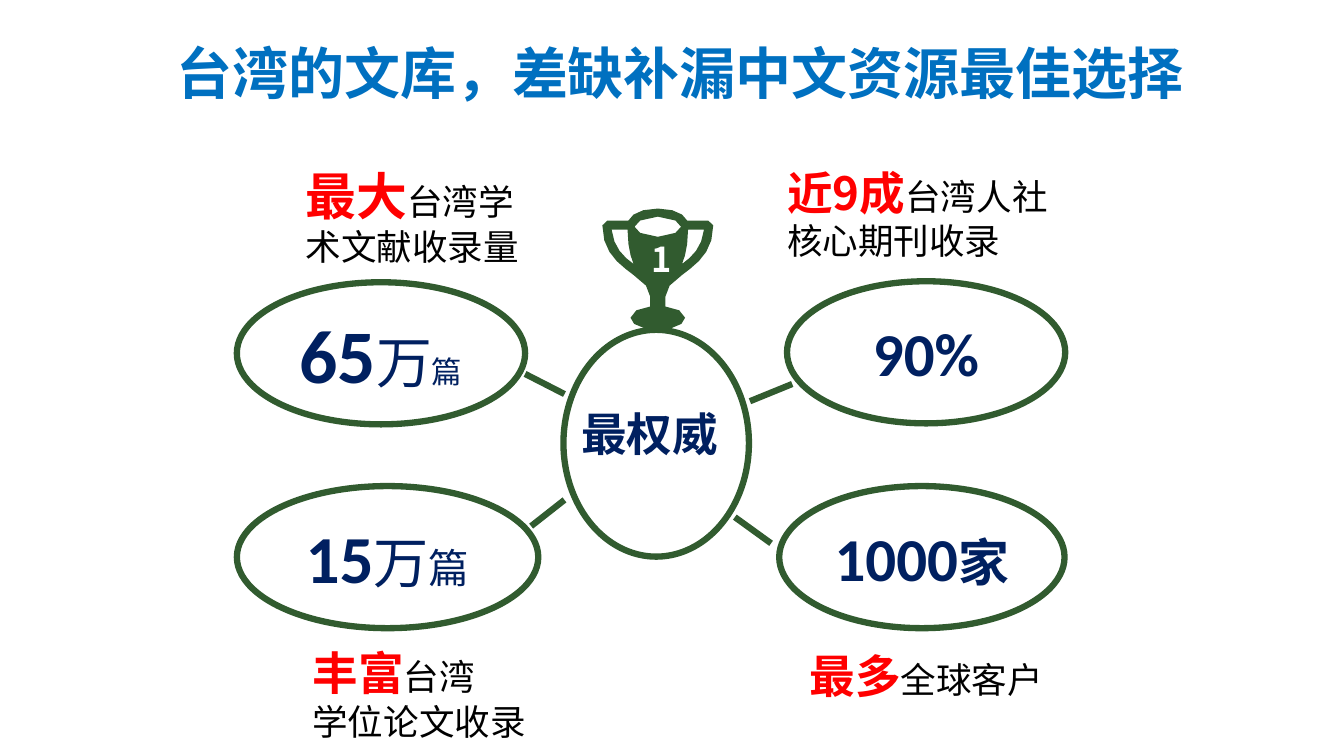
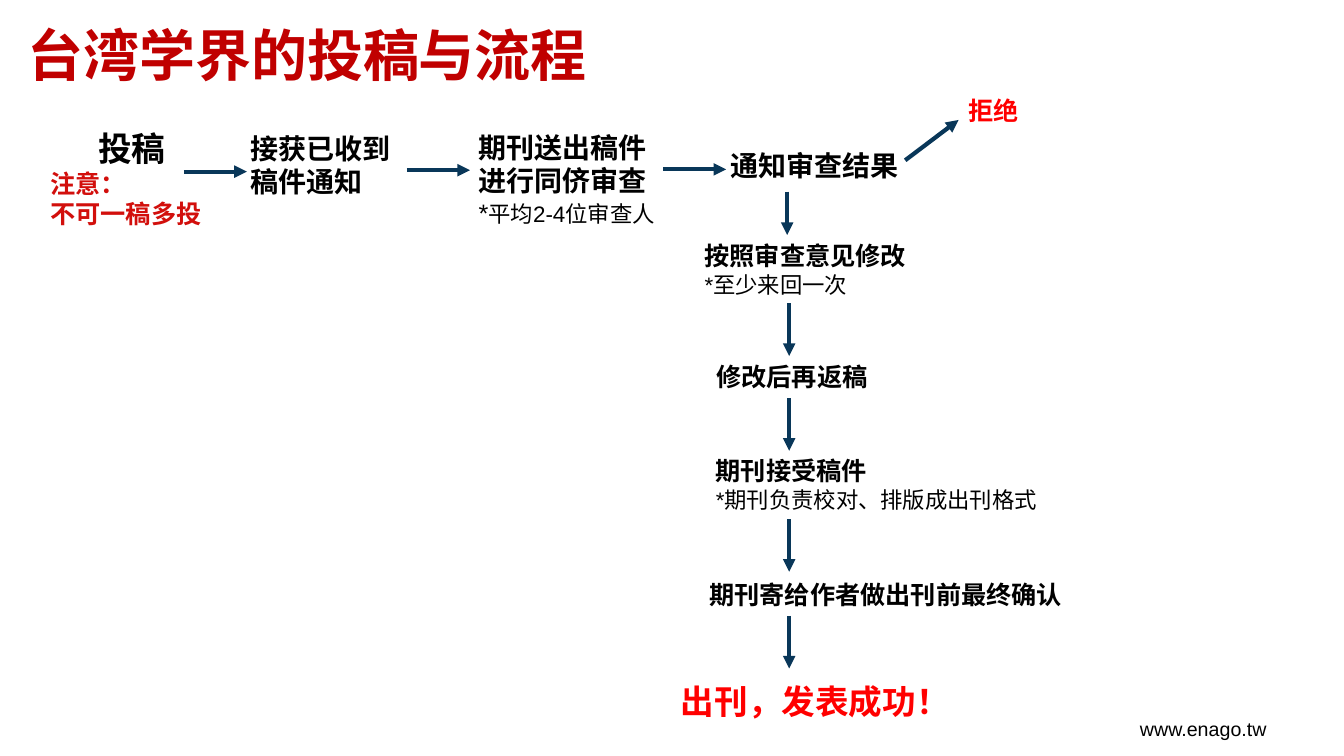
"""Build two slides on Taiwan scholarly resources and the submission process."""
import math

import lxml.etree
import pptx
import pptx.dml.color
import pptx.enum.shapes
import pptx.enum.text
import pptx.oxml.ns
import pptx.util

Pt = pptx.util.Pt
RGB = pptx.dml.color.RGBColor
ALIGN = pptx.enum.text.PP_ALIGN
ANCHOR = pptx.enum.text.MSO_ANCHOR
SHAPE = pptx.enum.shapes.MSO_SHAPE
qn = pptx.oxml.ns.qn

GREEN = RGB(0x31, 0x5B, 0x2F)
NAVY = RGB(0x00, 0x20, 0x60)
RED = RGB(0xFF, 0x00, 0x00)
WARNING = RGB(0xD2, 0x0F, 0x0C)
CRIMSON = RGB(0xC0, 0x00, 0x00)
BLUE = RGB(0x00, 0x70, 0xC0)
ARROW = RGB(0x09, 0x37, 0x59)
BLACK = RGB(0x00, 0x00, 0x00)
WHITE = RGB(0xFF, 0xFF, 0xFF)
CJK, LATIN, NUMERIC = "Noto Sans CJK SC", "Arial", "Calibri"

FIGURES = [
    ((169.2, 201.6, 205.9, 101.5), [("65", 54, True), ("万", 39.9, False), ("篇", 21.8, False)]),
    ((169.2, 347.2, 215.3, 101.5), [("15", 48, True), ("万", 39.4, False), ("篇", 29, False)]),
    ((562.2, 200.9, 198.7, 101.5), [("90%", 43.5, True)]),
    ((556.6, 347.2, 203.8, 101.5), [("1000", 43.5, True), ("家", 36.3, True)]),
]
CLAIMS = [
    ((218.2, 117.4, 157, 74.9), "最大", 36.3, ["台湾学术文献收录量"]),
    ((223.2, 460.8, 167.8, 70.6), "丰富", 32.6, ["台湾", "学位论文收录"]),
    ((562.2, 117.4, 187.2, 70.6), "近9成", 32.6, ["台湾人社核心期刊收录"]),
    ((578.2, 463, 170.6, 39.6), "最多", 32.6, ["全球客户"]),
]
HUB = (402.5, 235.6, 132.5, 162)
SPOKES = [
    (375.1, 267.1, 403.2, 281.5), (379.4, 375.8, 403.2, 357.1),
    (535.7, 286.6, 565.9, 274.3), (524.9, 369.4, 550.8, 388.1),
]

CUP_CENTER, CUP_TOP = 469.9, 149
CUP_HALVES = [
    [[(0, 0)], [(12, 0), (19, 4), (21, 8.6)], [(36, 8.6)],
     [(38, 8.6), (39.6, 10), (39.6, 12)], [(39.6, 32), (27, 40), (17.3, 47.5)],
     [(9.5, 53), (5.4, 57), (5.4, 63)], [(5.4, 70)],
     [(13, 70.5), (19.5, 74), (19.5, 78)], [(19.5, 83), (11, 86.4), (0, 86.4)]],
    [[(0, 5.8)], [(11.5, 5.8), (16.6, 10.8), (16.6, 13)],
     [(16.6, 15.1), (11.5, 20.2), (0, 20.2)]],
]
CUP_HANDLE = [[(17.3, 39.6)], [(19.5, 34.5), (21.6, 26.6), (21.6, 15)], [(33, 15)],
              [(31.5, 28), (24.5, 34.5), (17.3, 39.6)]]
CHORD = 8

STEPS = [
    ((172.1, 90.3, 132.5, 55.4), [("接获已收到稿件通知", 20, BLACK, True)]),
    ((334.8, 89.4, 145.4, 77.8), [("期刊送出稿件进行同侪审查", 20, BLACK, True),
                                  [("*", 18, BLACK, False), ("平均2-4位审查人", 16, BLACK, False)]]),
    ((514.8, 102.4, 144, 31.7), [("通知审查结果", 20, BLACK, True)]),
    ((684.7, 64.6, 117.4, 28.8), [("拒绝", 18, RED, True)]),
    ((496.2, 168.2, 218.9, 48.2), [("按照审查意见修改", 18, BLACK, True),
                                   ("*至少来回一次", 16, BLACK, False)]),
    ((504.6, 254.9, 126, 28.8), [("修改后再返稿", 18, BLACK, True)]),
    ((504.2, 322, 253.4, 48.2), [("期刊接受稿件", 18, BLACK, True),
                                 ("*期刊负责校对、排版成出刊格式", 16, BLACK, False)]),
    ((499.6, 410.4, 269.3, 28.8), [("期刊寄给作者做出刊前最终确认", 18, BLACK, True)]),
    ((479.3, 483.1, 229, 36), [("出刊，发表成功！", 24, RED, True)]),
]
SUBMIT = [("投稿", 24, BLACK, True), ("注意：", 18, WARNING, True),
          ("不可一稿多投", 18, WARNING, True)]
ACROSS = [(131.3, 122.6), (290.7, 121.6), (473.7, 121)]
ACROSS_LENGTH = 45
DOWN_X, DOWN_LENGTH = 563.7, 37.6
DOWN_TOPS = [216.7, 284.4, 370.8, 439.9]
OTHER_ARROWS = [(646.6, 114.5, 684.7, 85.7), (562.3, 136.8, 562.3, 167.8)]


def style(font, size, color, bold):
    """Set size, colour and weight."""
    font.size, font.bold = Pt(size), bold
    font.color.rgb = color


def write(frame, paragraphs, name, align=ALIGN.LEFT, inset=True):
    """Fill a text frame; a paragraph is one run or a list of runs."""
    frame.word_wrap = True
    if not inset:
        frame.margin_left = frame.margin_right = frame.margin_top = frame.margin_bottom = 0
    for index, runs in enumerate(paragraphs):
        paragraph = frame.add_paragraph() if index else frame.paragraphs[0]
        paragraph.alignment = align
        paragraph.font.name = name
        runs = runs if isinstance(runs, list) else [runs]
        for text, *look in runs:
            run = paragraph.add_run()
            run.text = text
            style(paragraph.font if len(runs) == 1 else run.font, *look)


def add_text(slide, box, paragraphs, name, **options):
    """Add a text box and return its frame."""
    frame = slide.shapes.add_textbox(*map(Pt, box)).text_frame
    write(frame, paragraphs, name, **options)
    return frame


def add_titled_slide(deck, box, text, name, color, line_spacing=None):
    """Add a title-only slide with its title placed and styled."""
    slide = deck.slides.add_slide(deck.slide_layouts[5])
    title = slide.shapes.title
    title.left, title.top, title.width, title.height = map(Pt, box)
    frame = title.text_frame
    frame.auto_size = pptx.enum.text.MSO_AUTO_SIZE.NONE
    frame.vertical_anchor = ANCHOR.TOP
    write(frame, [(text, 40, color, True)], name)
    if line_spacing:
        frame.paragraphs[0].line_spacing = Pt(line_spacing)
    return slide


def add_ellipse(slide, box):
    """Add a white ellipse with a green outline."""
    ellipse = slide.shapes.add_shape(SHAPE.OVAL, *map(Pt, box))
    ellipse.shadow.inherit = False
    ellipse.fill.solid()
    ellipse.fill.fore_color.rgb = WHITE
    ellipse.line.color.rgb = GREEN
    ellipse.line.width = Pt(4.5)
    return ellipse


def add_line(slide, ends, color, width, arrow=False):
    """Add a straight connector, with an arrowhead if asked."""
    line = slide.shapes.add_connector(pptx.enum.shapes.MSO_CONNECTOR.STRAIGHT, *map(Pt, ends))
    line.line.color.rgb = color
    line.line.width = Pt(width)
    if arrow:
        lxml.etree.SubElement(line.line._get_or_add_ln(), qn("a:tailEnd"), type="triangle")
    lxml.etree.SubElement(line._element.spPr, qn("a:effectLst"))


def trace(segments):
    """Turn line and cubic segments into a short list of points."""
    points = list(segments[0])
    for segment in segments[1:]:
        if len(segment) == 1:
            points += segment
            continue
        corners = [points[-1], *segment]
        steps = max(1, round(math.dist(corners[0], corners[-1]) / CHORD))
        for step in range(1, steps + 1):
            t = step / steps
            weights = ((1 - t) ** 3, 3 * t * (1 - t) ** 2, 3 * t * t * (1 - t), t ** 3)
            points.append(tuple(sum(w * c[axis] for w, c in zip(weights, corners))
                                for axis in (0, 1)))
    return points


def mirror(points):
    """Reflect points about the cup's axis, in reverse order."""
    return [(-x, y) for x, y in reversed(points)]


def add_cup(slide):
    """Draw the trophy cup with its openings."""
    handle = trace(CUP_HANDLE)[:-1]
    halves = [trace(half) for half in CUP_HALVES]
    contours = [half + mirror(half[1:-1]) for half in halves] + [handle, mirror(handle)]
    placed = [[(Pt(CUP_CENTER + x), Pt(CUP_TOP + y)) for x, y in contour] for contour in contours]
    builder = slide.shapes.build_freeform(*placed[0][0])
    for index, contour in enumerate(placed):
        if index:
            builder.move_to(*contour[0])
        builder.add_line_segments(contour[1:], close=True)
    cup = builder.convert_to_shape()
    cup.shadow.inherit = False
    cup.fill.solid()
    cup.fill.fore_color.rgb = GREEN
    cup.line.fill.background()


def build_strengths(deck):
    """Slide with four figures around a hub."""
    slide = add_titled_slide(deck, (118.8, 23.9, 748.8, 55.4),
                             "台湾的文库，差缺补漏中文资源最佳选择", CJK, BLUE)
    add_ellipse(slide, HUB)
    for box, parts in FIGURES:
        frame = add_ellipse(slide, box).text_frame
        frame.vertical_anchor = ANCHOR.MIDDLE
        runs = [(text, size, NAVY, bold) for text, size, bold in parts]
        write(frame, [runs], NUMERIC, align=ALIGN.CENTER)
    for ends in SPOKES:
        add_line(slide, ends, GREEN, 4.5)
    for box, lead, size, (first, *rest) in CLAIMS:
        paragraphs = [[(lead, size, RED, True), (first, 25.4, BLACK, False)]]
        paragraphs += [(text, 25.4, BLACK, False) for text in rest]
        add_text(slide, box, paragraphs, CJK, inset=False)
    add_text(slide, (403.2, 286.6, 121.7, 46.8), [("最权威", 32.6, NAVY, True)], LATIN,
             align=ALIGN.CENTER)
    add_cup(slide)
    add_text(slide, (451.3, 169.8, 42.5, 23), [("1", 24.5, WHITE, True)], CJK,
             align=ALIGN.CENTER, inset=False)


def build_process(deck):
    """Slide with the submission flow."""
    slide = add_titled_slide(deck, (12.4, 36.2, 435.6, 34.6), "台湾学界的投稿与流程",
                             "Open Sans", CRIMSON, 23)
    add_text(slide, (807.2, 508.8, 105.8, 24.5), [("www.enago.tw", 14, BLACK, False)],
             LATIN).word_wrap = False
    submit = add_text(slide, (28.9, 87.9, 130.3, 79.9), SUBMIT, LATIN)
    submit.paragraphs[0].alignment = ALIGN.CENTER
    for box, paragraphs in STEPS:
        add_text(slide, box, paragraphs, LATIN)
    arrows = [(x, y, x + ACROSS_LENGTH, y) for x, y in ACROSS]
    arrows += [(DOWN_X, top, DOWN_X, top + DOWN_LENGTH) for top in DOWN_TOPS]
    for ends in arrows + OTHER_ARROWS:
        add_line(slide, ends, ARROW, 3, arrow=True)


def main():
    """Build and save the deck."""
    deck = pptx.Presentation()
    deck.slide_width, deck.slide_height = Pt(960), Pt(540)
    build_strengths(deck)
    build_process(deck)
    deck.save("out.pptx")


if __name__ == "__main__":
    main()
